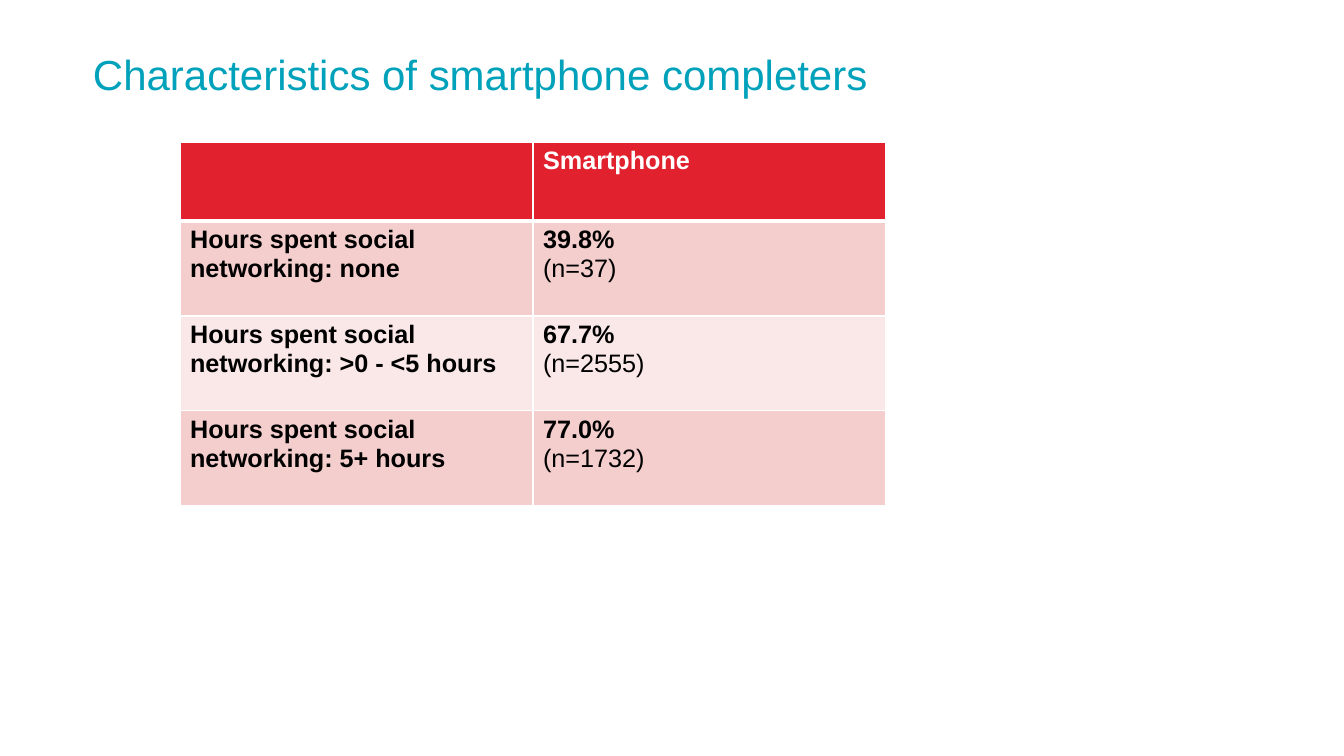
from lxml import etree
from pptx import Presentation
from pptx import util as u
from pptx.dml.color import RGBColor
from pptx.enum import text
from pptx.oxml import ns

SCALE = 914400 / 100.8  # EMU in one px
FONT = "Arial"
TEAL = RGBColor(0x00, 0xA1, 0xBA)
RED = RGBColor(0xE2, 0x21, 0x2F)
PINK = RGBColor(0xF4, 0xCD, 0xCD)
PALE = RGBColor(0xFA, 0xE8, 0xE8)
WHITE = RGBColor(0xFF, 0xFF, 0xFF)
BLACK = RGBColor(0x00, 0x00, 0x00)

ROWS = [
    ("", "Smartphone"),
    ("Hours spent social networking: none", "39.8%\n(n=37)"),
    ("Hours spent social networking: >0 - <5 hours", "67.7%\n(n=2555)"),
    ("Hours spent social networking: 5+ hours", "77.0%\n(n=1732)"),
]


def px(n):
    return u.Emu(round(n * SCALE))


def style(para, size, color, bold=False):
    for run in para.runs:
        font = run.font
        font.name, font.size, font.bold = FONT, u.Pt(size), bold
        font.color.rgb = color


def add_title(slide, words):
    title = slide.shapes.title
    title.left, title.top, title.width, title.height = map(px, (93, 54, 1159, 88))
    frame = title.text_frame
    frame.text = words
    frame.margin_left = frame.margin_right = 0
    frame.margin_top = frame.margin_bottom = 0
    frame.vertical_anchor = text.MSO_ANCHOR.TOP
    frame.auto_size = text.MSO_AUTO_SIZE.NONE
    para = frame.paragraphs[0]
    para.alignment = text.PP_ALIGN.LEFT
    para.line_spacing = 0.9
    style(para, 30, TEAL)


def add_edge(cell, side, width):
    props = cell._tc.get_or_add_tcPr()
    line = etree.SubElement(props, ns.qn("a:ln" + side), w=str(u.Pt(width)))
    fill = etree.SubElement(line, ns.qn("a:solidFill"))
    etree.SubElement(fill, ns.qn("a:srgbClr"), val=str(WHITE))


def fill_cell(cell, words, row):
    # Borders come before the fill; a thick rule sits under the header
    thick = {(0, "B"), (1, "T")}
    for side in "LRTB":
        add_edge(cell, side, 3 if (row, side) in thick else 1)
    cell.fill.solid()
    cell.fill.fore_color.rgb = RED if row == 0 else (PALE, PINK)[row % 2]
    cell.text_frame.text = words
    for i, para in enumerate(cell.text_frame.paragraphs):
        style(para, 18, BLACK if row else WHITE, bold=i == 0)


def add_grid(slide, rows):
    heights = [79] + [95] * (len(rows) - 1)
    frame = slide.shapes.add_table(
        len(rows), 2, px(180), px(142), px(706), px(sum(heights)))
    table = frame.table
    for r, (cells, height) in enumerate(zip(rows, heights)):
        table.rows[r].height = px(height)
        for c, words in enumerate(cells):
            fill_cell(table.cell(r, c), words, r)


def main():
    deck = Presentation()
    deck.slide_width, deck.slide_height = px(1344), px(756)
    slide = deck.slides.add_slide(deck.slide_layouts[5])
    add_title(slide, "Characteristics of smartphone completers")
    add_grid(slide, ROWS)
    deck.save("out.pptx")


if __name__ == "__main__":
    main()
